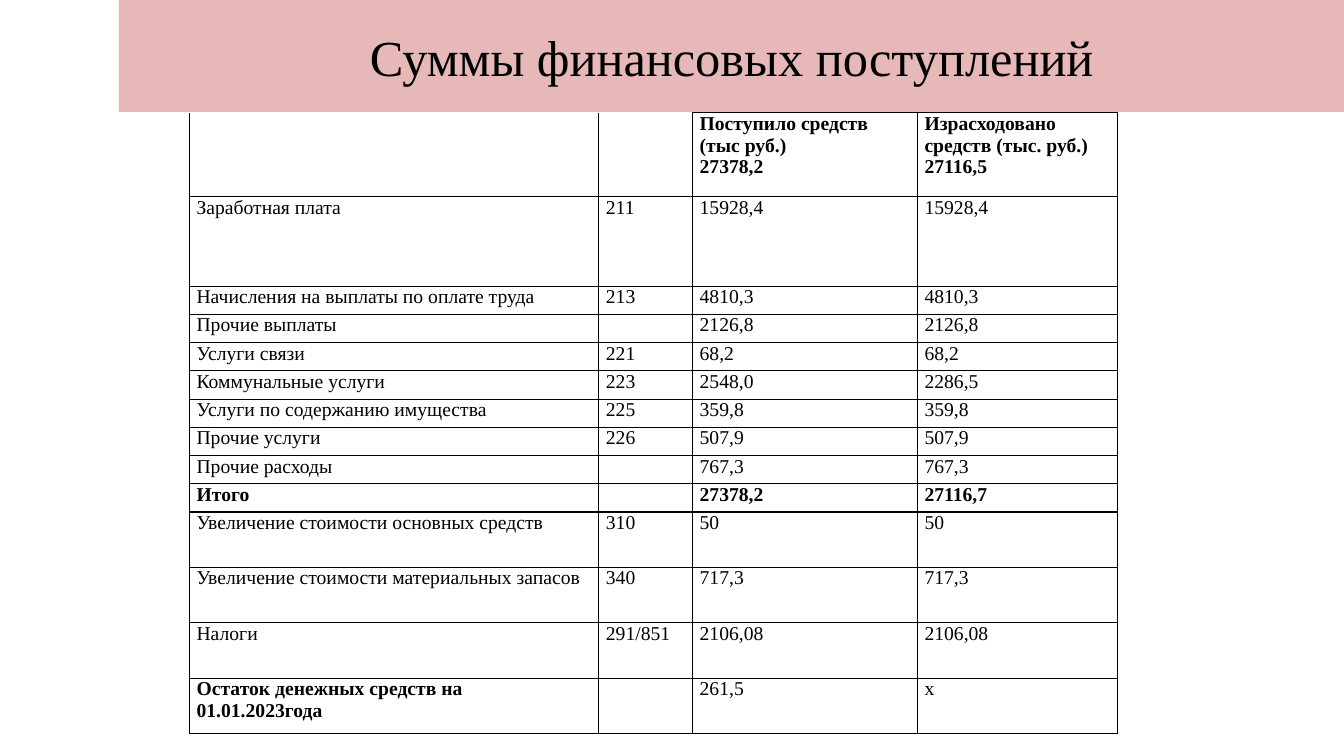
from lxml import etree
from pptx import Presentation
from pptx.dml.color import RGBColor
from pptx.enum.text import MSO_ANCHOR, PP_ALIGN
from pptx.oxml.ns import qn
from pptx.util import Inches, Pt

CENTER = PP_ALIGN.CENTER
MIDDLE = MSO_ANCHOR.MIDDLE
TITLE_ONLY = 5

COLUMN_WIDTHS = [4.06, 0.93, 2.23, 1.98]
ROW_HEIGHTS = [0.83, 0.89] + [0.28] * 8 + [0.55] * 4
ROWS = [
    ["", "", "Поступило средств\n(тыс руб.)\n27378,2",
     "Израсходовано\nсредств (тыс. руб.) 27116,5"],
    ["Заработная плата", "211", "15928,4", "15928,4"],
    ["Начисления на выплаты по оплате труда", "213", "4810,3", "4810,3"],
    ["Прочие выплаты", "", "2126,8", "2126,8"],
    ["Услуги связи", "221", "68,2", "68,2"],
    ["Коммунальные услуги", "223", "2548,0", "2286,5"],
    ["Услуги по содержанию имущества", "225", "359,8", "359,8"],
    ["Прочие услуги", "226", "507,9", "507,9"],
    ["Прочие расходы", "", "767,3", "767,3"],
    ["Итого", "", "27378,2", "27116,7"],
    ["Увеличение стоимости основных средств", "310", "50", "50"],
    ["Увеличение стоимости материальных запасов", "340", "717,3", "717,3"],
    ["Налоги", "291/851", "2106,08", "2106,08"],
    ["Остаток денежных средств на 01.01.2023года", "", "261,5", "х"],
]
HEADER_ROW, TOTAL_ROW, BALANCE_ROW = 0, 9, 13


def color(hex_string):
    return RGBColor.from_string(hex_string)


def is_bold(row, column):
    return row in (HEADER_ROW, TOTAL_ROW) or (row, column) == (BALANCE_ROW, 0)


class SlideBuilder:
    font_name = "Times New Roman"
    ink = "000000"
    title_fill = "E6B9B8"
    title_size = 36
    table_size = 14
    border_width = 1

    def __init__(self, presentation):
        self.slide = presentation.slides.add_slide(presentation.slide_layouts[TITLE_ONLY])

    def format_runs(self, paragraph, size, bold=False):
        for run in paragraph.runs:
            run.font.name = self.font_name
            run.font.size = Pt(size)
            run.font.bold = bold
            run.font.color.rgb = color(self.ink)

    def title(self, text, left, top, width, height):
        shape = self.slide.shapes.title
        shape.left, shape.top = Inches(left), Inches(top)
        shape.width, shape.height = Inches(width), Inches(height)
        shape.fill.solid()
        shape.fill.fore_color.rgb = color(self.title_fill)
        shape.text_frame.text = text
        shape.text_frame.vertical_anchor = MIDDLE
        paragraph = shape.text_frame.paragraphs[0]
        paragraph.alignment = CENTER
        self.format_runs(paragraph, self.title_size)

    def borders(self, cell, hidden_sides):
        properties = cell._tc.get_or_add_tcPr()
        for side in "LRTB":
            line = etree.SubElement(properties, qn(f"a:ln{side}"), w=str(Pt(self.border_width)))
            if side in hidden_sides:
                etree.SubElement(line, qn("a:noFill"))
            else:
                fill = etree.SubElement(line, qn("a:solidFill"))
                etree.SubElement(fill, qn("a:srgbClr"), val=self.ink)

    def cell(self, cell, text, bold, hidden_sides):
        cell.margin_left = cell.margin_right = Inches(0.07)
        cell.margin_top = cell.margin_bottom = 0
        self.borders(cell, hidden_sides)
        cell.fill.background()
        cell.text_frame.text = text
        for paragraph in cell.text_frame.paragraphs:
            self.format_runs(paragraph, self.table_size, bold)
            if not paragraph.runs:
                # An empty cell must not make its row taller.
                end = etree.SubElement(paragraph._p, qn("a:endParaRPr"))
                end.set("sz", str(self.table_size * 100))

    def table(self, rows, left, top, column_widths, row_heights):
        table = self.slide.shapes.add_table(
            len(rows), len(column_widths), Inches(left), Inches(top),
            Inches(sum(column_widths)), Inches(sum(row_heights))).table
        table.first_row = table.horz_banding = False
        for column, width in zip(table.columns, column_widths):
            column.width = Inches(width)
        for row, height in zip(table.rows, row_heights):
            row.height = Inches(height)
        for row_index, texts in enumerate(rows):
            for column_index, text in enumerate(texts):
                blank_header = row_index == HEADER_ROW and not text
                self.cell(table.cell(row_index, column_index), text,
                          is_bold(row_index, column_index), "T" if blank_header else "")


def main():
    presentation = Presentation()
    presentation.slide_width = Inches(13.33)
    presentation.slide_height = Inches(7.5)
    builder = SlideBuilder(presentation)
    builder.title("Суммы финансовых поступлений", 1.18, 0, 12.16, 1.11)
    builder.table(ROWS, 1.88, 1.12, COLUMN_WIDTHS, ROW_HEIGHTS)
    presentation.save("out.pptx")


if __name__ == "__main__":
    main()
